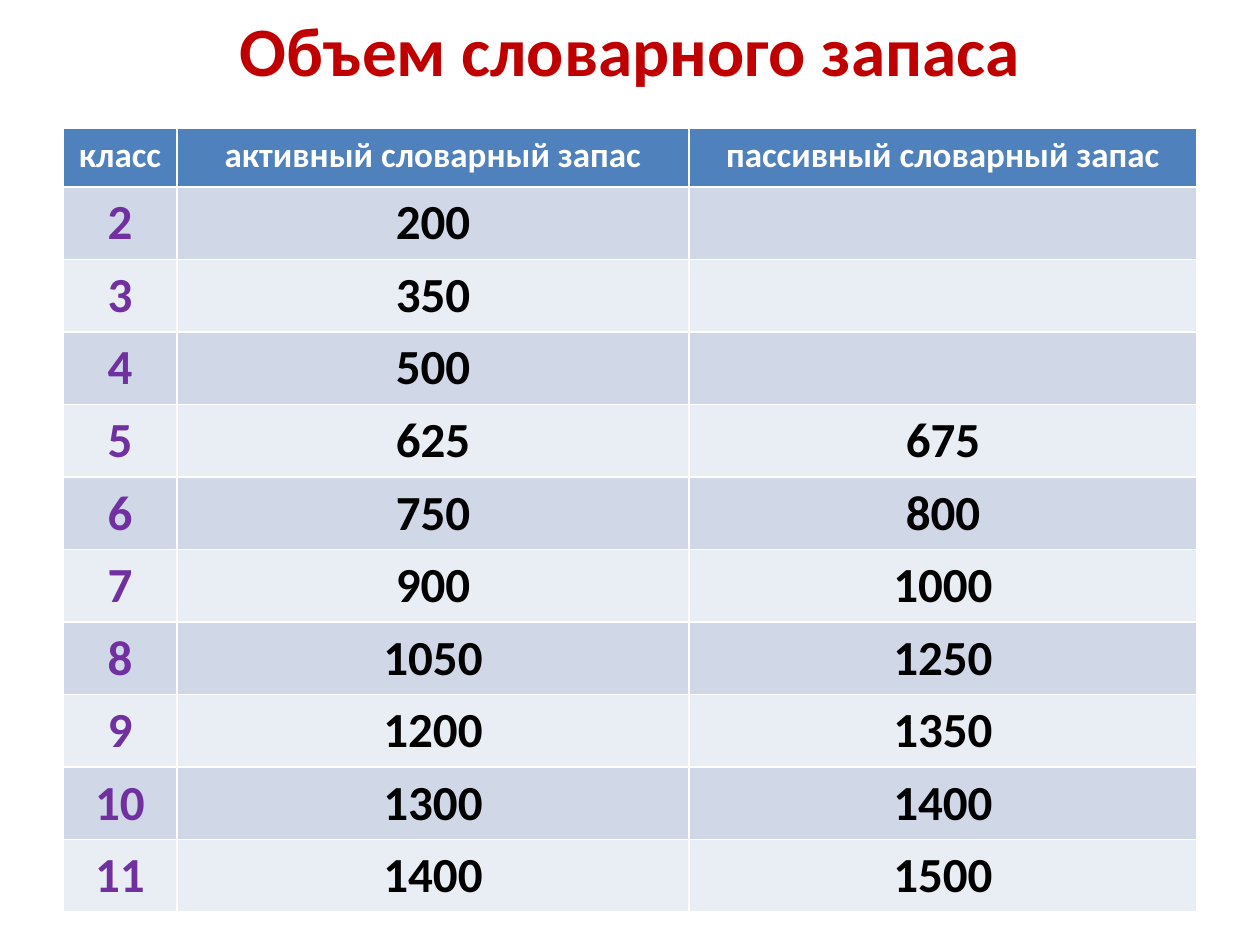
from dataclasses import dataclass

from pptx import Presentation
from pptx.dml.color import RGBColor
from pptx.enum.text import MSO_ANCHOR, PP_ALIGN
from pptx.util import Pt

PX = 914400 // 126


@dataclass(frozen=True)
class Theme:
    font: str = "Calibri"
    title_color: str = "C00000"
    header_fill: str = "4F81BD"
    header_color: str = "FFFFFF"
    odd_fill: str = "D0D8E8"
    even_fill: str = "E9EDF4"
    grade_color: str = "7030A0"
    count_color: str = "000000"
    title_size: float = 39.6
    header_size: int = 20
    body_size: int = 28


theme = Theme()


def style_text(frame, size, color, anchor):
    frame.vertical_anchor = anchor
    for paragraph in frame.paragraphs:
        paragraph.alignment = PP_ALIGN.CENTER
        for run in paragraph.runs:
            run.font.name = theme.font
            run.font.size = Pt(size)
            run.font.bold = True
            run.font.color.rgb = RGBColor.from_string(color)


presentation = Presentation()
presentation.slide_width = 1260 * PX
presentation.slide_height = 945 * PX
slide = presentation.slides.add_slide(presentation.slide_layouts[5])

title = slide.shapes.title
title.left, title.top, title.width, title.height = 63 * PX, 0, 1134 * PX, 98 * PX
title.text_frame.text = "Объем словарного запаса"
style_text(title.text_frame, theme.title_size, theme.title_color, MSO_ANCHOR.MIDDLE)

vocabulary = [
    ("класс", "активный словарный запас", "пассивный словарный запас"),
    ("2", "200", ""),
    ("3", "350", ""),
    ("4", "500", ""),
    ("5", "625", "675"),
    ("6", "750", "800"),
    ("7", "900", "1000"),
    ("8", "1050", "1250"),
    ("9", "1200", "1350"),
    ("10", "1300", "1400"),
    ("11", "1400", "1500"),
]
column_widths = [114, 512, 508]
header_height, grade_height = 59, 72
table_height = header_height + grade_height * (len(vocabulary) - 1)

# The default table style supplies the white rules between cells.
table = slide.shapes.add_table(
    len(vocabulary), len(column_widths),
    63 * PX, 128 * PX, sum(column_widths) * PX, table_height * PX,
).table
for column, width in zip(table.columns, column_widths):
    column.width = width * PX

for row_index, entries in enumerate(vocabulary):
    is_header = row_index == 0
    table.rows[row_index].height = (header_height if is_header else grade_height) * PX
    if is_header:
        fill, size, anchor = theme.header_fill, theme.header_size, MSO_ANCHOR.TOP
    else:
        fill = theme.odd_fill if row_index % 2 else theme.even_fill
        size, anchor = theme.body_size, MSO_ANCHOR.MIDDLE
    for column_index, entry in enumerate(entries):
        cell = table.cell(row_index, column_index)
        cell.fill.solid()
        cell.fill.fore_color.rgb = RGBColor.from_string(fill)
        cell.vertical_anchor = anchor
        if not entry:
            continue
        if is_header:
            color = theme.header_color
        else:
            color = theme.count_color if column_index else theme.grade_color
        cell.text_frame.text = entry
        style_text(cell.text_frame, size, color, None)

presentation.save("out.pptx")
